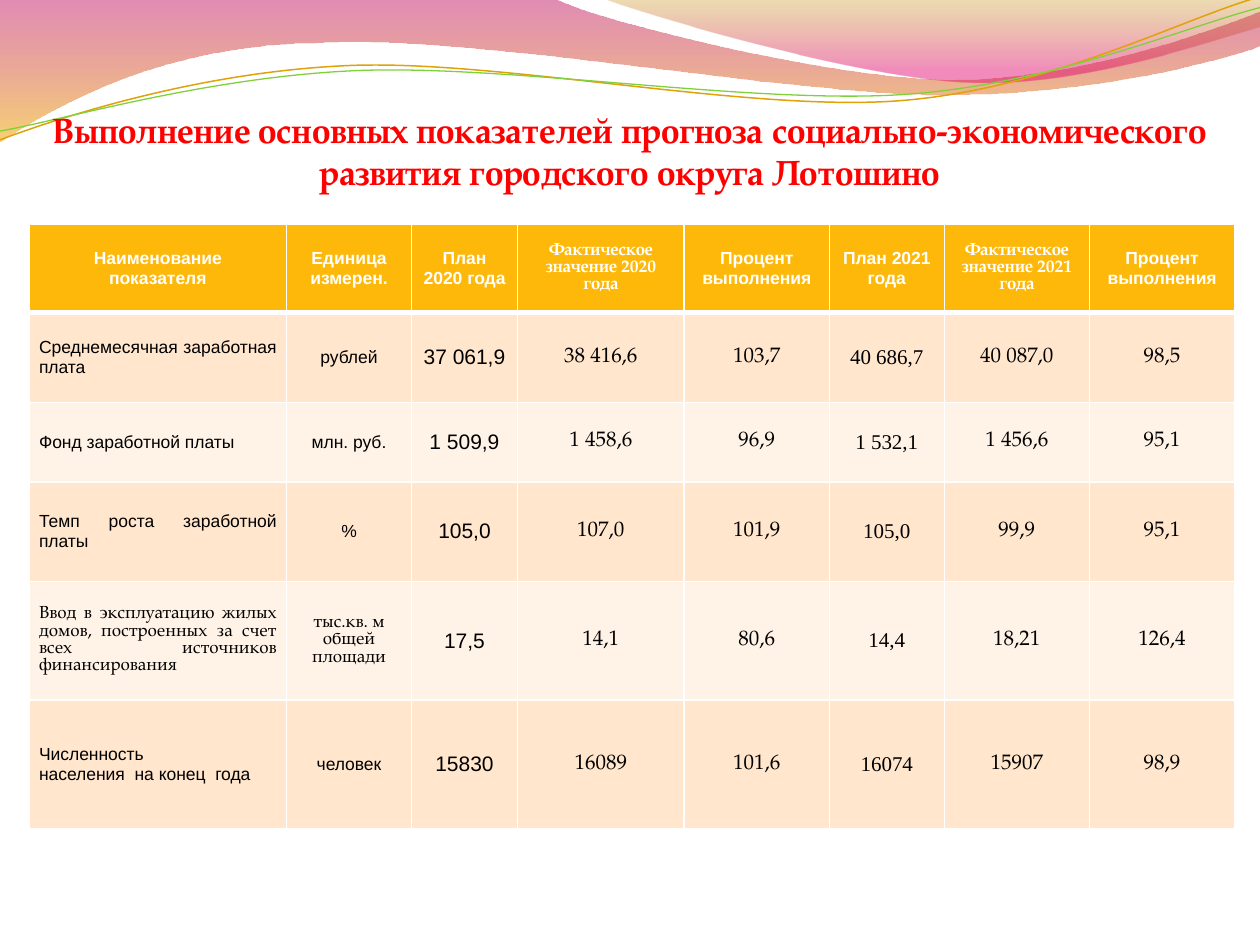
from math import cos, radians, sin

from lxml.etree import SubElement
from pptx import Presentation
from pptx.dml.color import RGBColor
from pptx.enum.text import MSO_ANCHOR as Anchor, PP_ALIGN as Align
from pptx.oxml.ns import qn
from pptx.util import Inches, Pt

SANS, SERIF, TIMES = "Arial", "TeX Gyre Pagella", "Times New Roman"
TILT = 2.7  # degrees the thin curves are turned counter-clockwise

TITLE = ("Выполнение основных показателей прогноза "
         "социально-экономического развития городского округа Лотошино")

# Table content: a line break starts a new paragraph
TABLE_WIDTH, TABLE_HEIGHT = 9.57, 4.8
COLUMNS = [2.04, 0.99, 0.84, 1.32, 1.15, 0.91, 1.15, 1.15]
ROW_HEIGHTS = [0.7, 0.71, 0.63, 0.79, 0.94, 1.02]
HEADER = ["Наименование\nпоказателя", "Единица\nизмерен.", "План 2020 года",
          "Фактическое значение 2020 года", "Процент выполнения",
          "План 2021 года", "Фактическое значение 2021 года",
          "Процент выполнения"]
ROWS = [
    ["Среднемесячная заработная плата", "рублей", "37 061,9", "38 416,6",
     "103,7", "40 686,7", "40 087,0", "98,5"],
    ["Фонд заработной платы", "млн. руб.", "1 509,9", "1 458,6",
     "96,9", "1 532,1", "1 456,6", "95,1"],
    ["Темп роста заработной платы", "%", "105,0", "107,0",
     "101,9", "105,0", "99,9", "95,1"],
    ["Ввод в эксплуатацию жилых домов, построенных за счет всех источников "
     "финансирования", "тыс.кв. м общей площади", "17,5", "14,1",
     "80,6", "14,4", "18,21", "126,4"],
    ["Численность\nнаселения  на конец  года", "человек", "15830", "16089",
     "101,6", "16074", "15907", "98,9"],
]
HEADER_FONTS = [SANS, SANS, SANS, SERIF, SANS, SANS, SERIF, SANS]
BODY_FONTS = [SANS, SANS, SANS, SERIF, SERIF, TIMES, SERIF, SERIF]
SERIF_LABEL_ROW = 4

# Decoration: start point, then segments of one point (line) or three (curve)
LEFT_WAVE = [[(0, -0.01)], [(4.4, -0.01)],
             [(4.76, 0.17), (6.64, 0.63), (7.58, 0.63)],
             [(8.53, 0.63), (9.58, 0.26), (10, 0.09)], [(10.01, 0.36)],
             [(9.83, 0.44), (8.7, 0.76), (7.46, 0.75)],
             [(6.22, 0.75), (3.82, 0.28), (2.57, 0.34)],
             [(1.29, 0.35), (0.46, 0.83), (-0.01, 1.13)]]
RIGHT_WAVE = [[(4.79, -0.01)], [(5.09, 0.11), (6.82, 0.62), (7.69, 0.65)],
              [(8.56, 0.69), (9.61, 0.32), (10, 0.21)], [(10, 0)]]
ORANGE_CURVE = [[(0, 1.11)], [(0.48, 0.93), (1.58, 0.57), (2.77, 0.52)],
                [(3.95, 0.47), (5.93, 0.89), (7.13, 0.8)],
                [(8.33, 0.71), (9.38, 0.15), (9.98, -0.02)]]
GREEN_CURVE = [[(0, 1.04)], [(0.47, 0.96), (1.64, 0.61), (2.83, 0.56)],
               [(4.03, 0.51), (5.97, 0.83), (7.17, 0.75)],
               [(8.36, 0.67), (9.41, 0.21), (10, 0.06)]]


def color(value):
    return RGBColor.from_string(value)


def add_outline(page, segments, close):
    """Build a freeform, then join each three-point segment into a curve."""
    points = [(Inches(x), Inches(y)) for segment in segments for x, y in segment]
    builder = page.shapes.build_freeform(*points[0])
    builder.add_line_segments(points[1:], close=close)
    shape = builder.convert_to_shape()
    shape.shadow.inherit = False
    lines = iter(list(shape.element.spPr.iter(qn("a:lnTo"))))
    for segment in segments[1:]:
        first = next(lines)
        if len(segment) == 3:
            first.tag = qn("a:cubicBezTo")
            for line in (next(lines), next(lines)):
                first.append(line[0])
                line.getparent().remove(line)
    return shape


def add_wave(page, segments, stops):
    """Add a shape with a see-through gradient running downwards."""
    shape = add_outline(page, segments, close=True)
    shape.line.fill.background()
    shape.fill.gradient()
    shape.fill.gradient_angle = 270
    for stop, (position, value, opacity) in zip(shape.fill.gradient_stops, stops):
        stop.position = position
        stop.color.rgb = color(value)
    tints = shape.element.spPr.iter(qn("a:srgbClr"))
    for tint, (position, value, opacity) in zip(tints, stops):
        SubElement(tint, qn("a:alpha"), val=str(opacity * 1000))


def turn(point, center, degrees):
    """Turn a point clockwise about a center."""
    angle = radians(degrees)
    dx, dy = point[0] - center[0], point[1] - center[1]
    return (center[0] + dx * cos(angle) - dy * sin(angle),
            center[1] + dx * sin(angle) + dy * cos(angle))


def add_curve(page, segments, center, value, width):
    level = [[turn(point, center, TILT) for point in segment]
             for segment in segments]
    shape = add_outline(page, level, close=False)
    shape.rotation = -TILT
    shape.fill.background()
    shape.line.color.rgb = color(value)
    shape.line.width = Pt(width)


def write(frame, text, font, size, value, bold=False, align=Align.CENTER):
    for index, line in enumerate(text.split("\n")):
        para = frame.add_paragraph() if index else frame.paragraphs[0]
        para.alignment = align
        span = para.add_run()
        span.text = line
        span.font.name = font
        span.font.size = Pt(size)
        span.font.bold = bold
        span.font.color.rgb = color(value)


def add_title(page):
    box = page.shapes.add_textbox(Inches(0.2), Inches(0.51), Inches(9.6), Inches(1.02))
    frame = box.text_frame
    frame.word_wrap = True
    frame.vertical_anchor = Anchor.BOTTOM
    frame.margin_left = frame.margin_right = frame.margin_bottom = 0
    frame.margin_top = Inches(0.05)
    write(frame, TITLE, SERIF, 20, "FF0000", bold=True)


def style_cell(cell, fill, bottom_width):
    cell.vertical_anchor = Anchor.MIDDLE
    cell.margin_left = cell.margin_right = Inches(0.08)
    cell.margin_top = cell.margin_bottom = 0
    # Borders come before the fill in the cell properties
    properties = cell._tc.get_or_add_tcPr()
    for side, width in (("L", 1), ("R", 1), ("T", 1), ("B", bottom_width)):
        border = SubElement(properties, qn(f"a:ln{side}"), w=str(Pt(width)))
        solid = SubElement(border, qn("a:solidFill"))
        SubElement(solid, qn("a:srgbClr"), val="FFFFFF")
    cell.fill.solid()
    cell.fill.fore_color.rgb = color(fill)


def add_indicators(page):
    table = page.shapes.add_table(
        len(ROW_HEIGHTS), len(COLUMNS), Inches(0.23), Inches(1.78),
        Inches(TABLE_WIDTH), Inches(TABLE_HEIGHT)).table
    # Shares of the full width and height
    for column, width in zip(table.columns, COLUMNS):
        column.width = Inches(TABLE_WIDTH * width / sum(COLUMNS))
    for row, height in zip(table.rows, ROW_HEIGHTS):
        row.height = Inches(TABLE_HEIGHT * height / sum(ROW_HEIGHTS))

    # Header row
    for index, (text, font) in enumerate(zip(HEADER, HEADER_FONTS)):
        cell = table.cell(0, index)
        style_cell(cell, "FEB80A", 3)
        write(cell.text_frame, text, font, 10, "FFFFFF", bold=True)

    # Body rows: two label columns, then figures
    for number, row in enumerate(ROWS, start=1):
        for index, (text, font) in enumerate(zip(row, BODY_FONTS)):
            cell = table.cell(number, index)
            style_cell(cell, "FFE6CC" if number % 2 else "FFF3E7", 1)
            is_label = index < 2
            if is_label and number == SERIF_LABEL_ROW:
                font = SERIF
            write(cell.text_frame, text, font, 10 if is_label else 12, "000000",
                  align=Align.CENTER if index else Align.JUSTIFY)


def main():
    deck = Presentation()
    deck.slide_width, deck.slide_height = Inches(10), Inches(7.5)
    page = deck.slides.add_slide(deck.slide_layouts[6])

    # Waves along the top
    add_wave(page, LEFT_WAVE, [(0, "BD0059", 45), (1, "F0AB00", 55)])
    add_wave(page, RIGHT_WAVE, [(0, "C38B00", 30), (0.8, "E1006B", 45)])
    add_curve(page, ORANGE_CURVE, (4.99, 0.57), "E0A209", 0.85)
    add_curve(page, GREEN_CURVE, (4.99, 0.59), "7FD13B", 0.75)

    add_title(page)
    add_indicators(page)
    deck.save("out.pptx")


if __name__ == "__main__":
    main()
